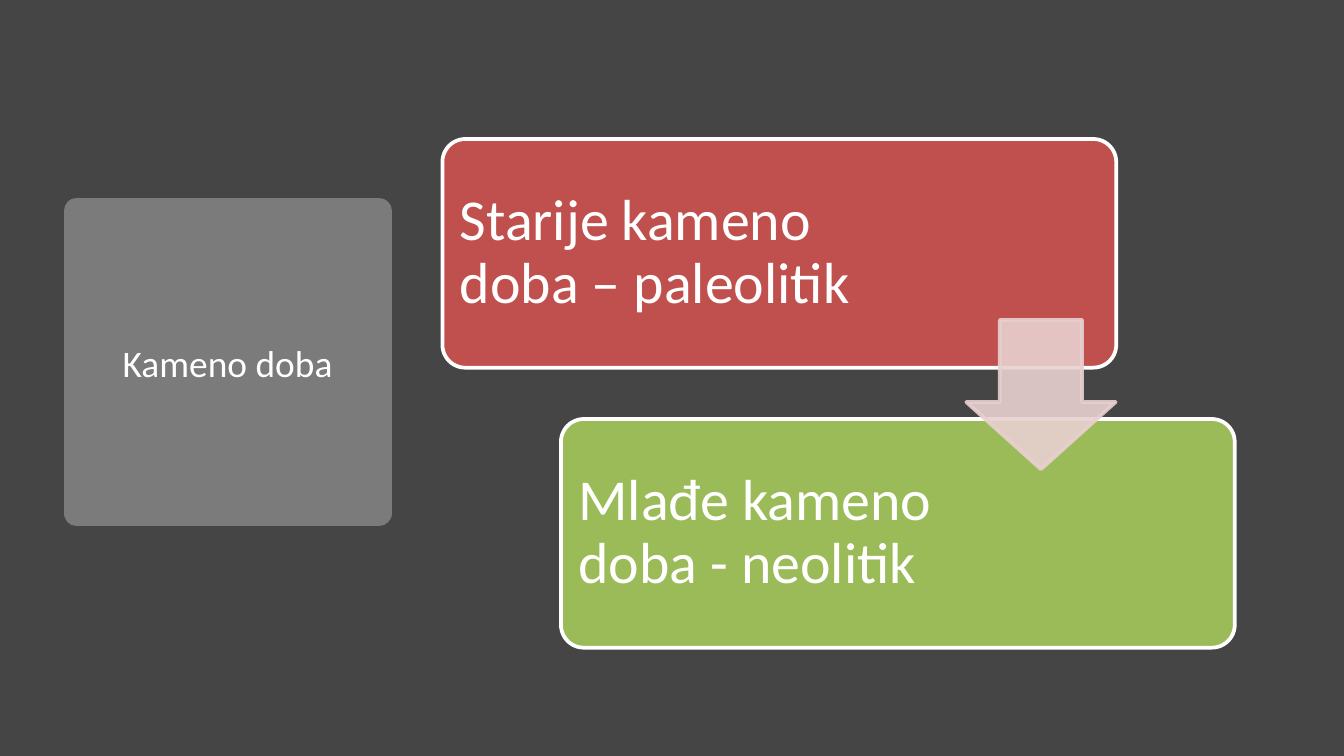
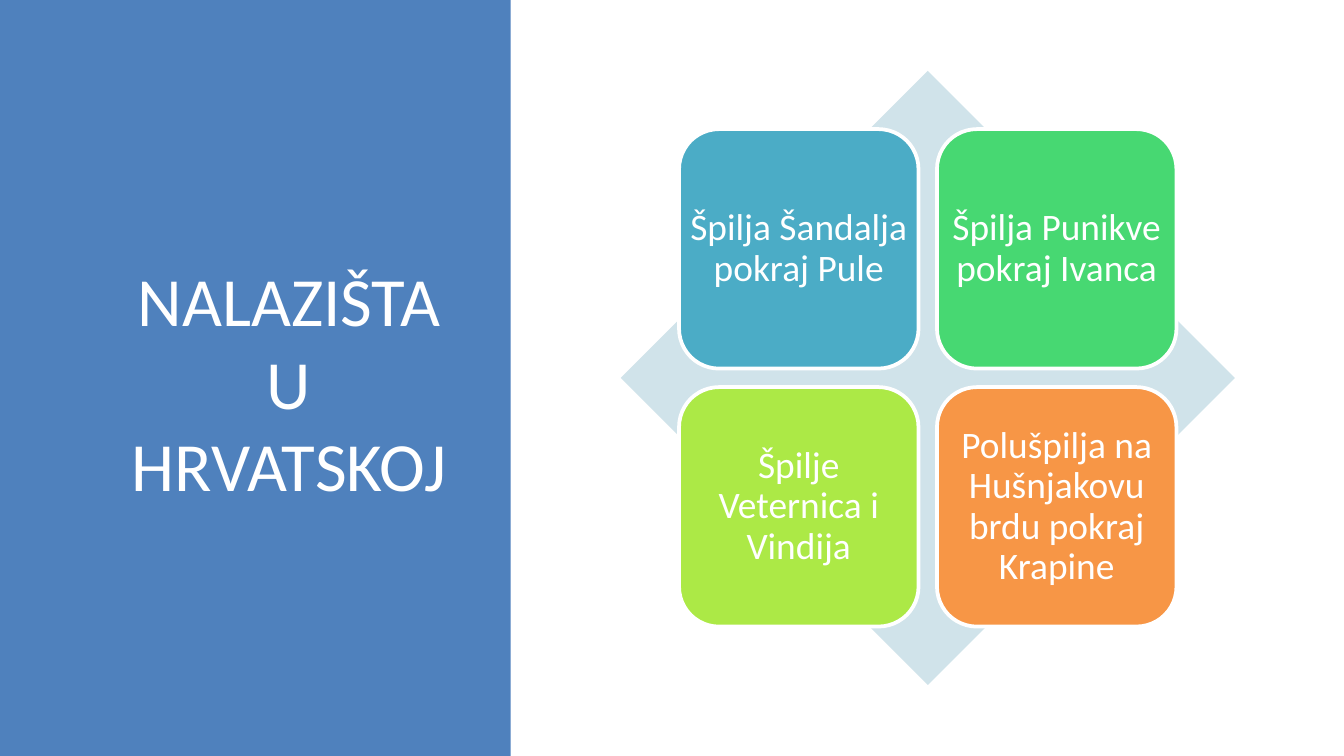
from lxml.etree import SubElement
from pptx import Presentation
from pptx.dml.color import RGBColor
from pptx.enum.shapes import MSO_SHAPE
from pptx.enum.text import MSO_ANCHOR, PP_ALIGN
from pptx.oxml.ns import qn
from pptx.util import Pt

FONT = "Calibri"
WHITE = "FFFFFF"
color = RGBColor.from_string


def add_box(slide, kind, left, top, width, height, fill, line=None, line_width=2):
    shape = slide.shapes.add_shape(kind, Pt(left), Pt(top), Pt(width), Pt(height))
    shape.shadow.inherit = False
    shape.fill.solid()
    shape.fill.fore_color.rgb = color(fill)
    if line:
        shape.line.color.rgb = color(line)
        shape.line.width = Pt(line_width)
    else:
        shape.line.fill.background()
    return shape


def write_text(shape, text, size, align=PP_ALIGN.CENTER, inset=None, spacing=1.0):
    frame = shape.text_frame
    frame.text = text
    frame.word_wrap = True
    frame.vertical_anchor = MSO_ANCHOR.MIDDLE
    if inset is not None:
        frame.margin_left = frame.margin_right = Pt(inset)
        frame.margin_top = frame.margin_bottom = Pt(inset)
    paragraph = frame.paragraphs[0]
    paragraph.alignment = align
    paragraph.line_spacing = spacing
    font = paragraph.runs[0].font
    font.name = FONT
    font.size = Pt(size)
    font.color.rgb = color(WHITE)


presentation = Presentation()
presentation.slide_width = Pt(720)
presentation.slide_height = Pt(405)
blank = presentation.slide_layouts[6]

ages_slide = presentation.slides.add_slide(blank)
ages_slide.background.fill.solid()
ages_slide.background.fill.fore_color.rgb = color("454545")

title = add_box(ages_slide, MSO_SHAPE.RECTANGLE, 41, 113, 162, 162, "7B7B7B", "7B7B7B", 13.75)
write_text(title, "Kameno doba", 20)

ages = [
    ("Starije kameno doba – paleolitik", "C0504D", 241),
    ("Mlađe kameno doba - neolitik", "9BBB59", 217.5),
]
for index, (text, fill, text_width) in enumerate(ages):
    left = 237 + index * 63.5
    top = 74.5 + index * 150
    card = add_box(ages_slide, MSO_SHAPE.ROUNDED_RECTANGLE, left, top, 361, 122.5, fill, WHITE)
    card.adjustments[0] = 0.1
    label = ages_slide.shapes.add_textbox(Pt(left), Pt(top), Pt(text_width), Pt(122.5))
    write_text(label, text, 31, PP_ALIGN.LEFT, 9.4, 0.9)

arrow = add_box(ages_slide, MSO_SHAPE.DOWN_ARROW, 517.7, 171.4, 80, 80, "E8D0D0", "E8D0D0")
arrow.adjustments[0] = 0.55
arrow.adjustments[1] = 0.45
for arrow_color in arrow.element.spPr.iter(qn("a:srgbClr")):
    SubElement(arrow_color, qn("a:alpha"), val="90000")

sites_slide = presentation.slides.add_slide(blank)
sites_slide.background.fill.solid()
sites_slide.background.fill.fore_color.rgb = color(WHITE)

add_box(sites_slide, MSO_SHAPE.RECTANGLE, 0, 0, 273.6, 405, "4F81BD")
title = sites_slide.shapes.add_textbox(Pt(55.5), Pt(42), Pt(198.7), Pt(324.7))
write_text(title, "NALAZIŠTA U HRVATSKOJ", 37)

add_box(sites_slide, MSO_SHAPE.DIAMOND, 332.6, 38, 329, 329, "D0E3EA")
sites = [
    ("Špilja Šandalja pokraj Pule", "4BACC6"),
    ("Špilja Punikve pokraj Ivanca", "47D872"),
    ("Špilje Veternica i Vindija", "ACE946"),
    ("Polušpilja na Hušnjakovu brdu pokraj Krapine", "F79646"),
]
tile_size = 128.3
tile_step = 138.2
for index, (text, fill) in enumerate(sites):
    row, column = divmod(index, 2)
    left = 363.8 + column * tile_step
    top = 69.2 + row * tile_step
    add_box(sites_slide, MSO_SHAPE.ROUNDED_RECTANGLE, left, top, tile_size, tile_size, fill, WHITE)
    label = sites_slide.shapes.add_textbox(Pt(left), Pt(top), Pt(tile_size), Pt(tile_size))
    write_text(label, text, 20, inset=5.5, spacing=0.9)

presentation.save("out.pptx")
